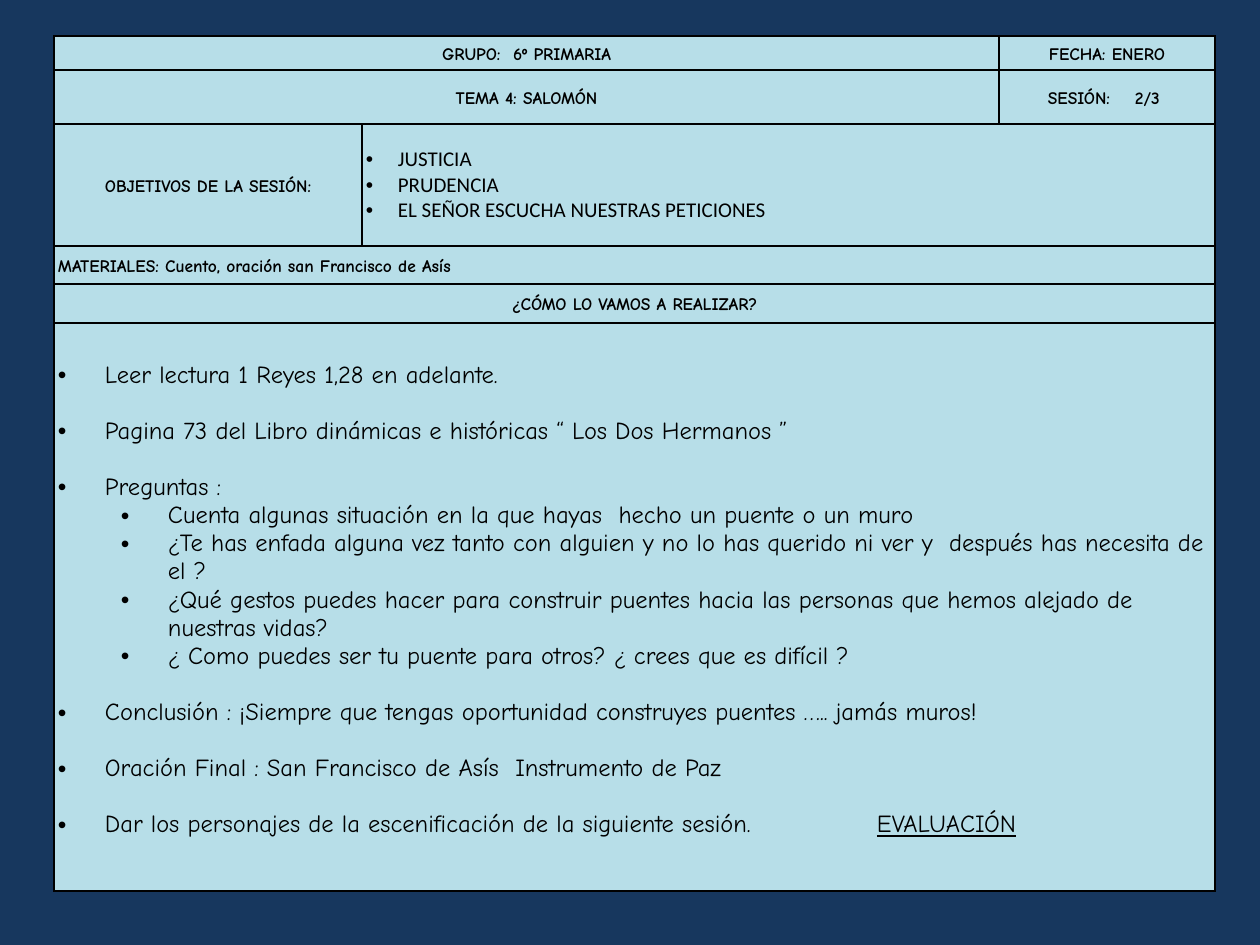
from dataclasses import dataclass

from lxml.etree import SubElement
from pptx import Presentation
from pptx.dml.color import RGBColor
from pptx.enum.text import MSO_ANCHOR as Anchor, PP_ALIGN as Align
from pptx.oxml.ns import qn
from pptx.util import Pt

PX = 914400 / 126
COLUMNS = [308, 637, 216]
ROWS = [34, 54, 122, 38, 39, 568]
GOALS = ["JUSTICIA", "PRUDENCIA", "EL SEÑOR ESCUCHA NUESTRAS PETICIONES"]
HEADINGS = [
    (0, 0, 1, "GRUPO:  6º PRIMARIA", Align.CENTER),
    (0, 2, 2, "FECHA: ENERO", Align.CENTER),
    (1, 0, 1, "TEMA 4: SALOMÓN", Align.CENTER),
    (1, 2, 2, "SESIÓN:    2/3 ", Align.CENTER),
    (2, 0, 0, "OBJETIVOS DE LA SESIÓN:", Align.CENTER),
    (3, 0, 2, "MATERIALES: Cuento, oración san Francisco de Asís", Align.LEFT),
    (4, 0, 2, "¿CÓMO LO VAMOS A REALIZAR?", Align.CENTER),
]
ACTIVITIES = [
    ("Leer lectura 1 Reyes 1,28 en adelante.", []),
    ("Pagina 73 del Libro dinámicas e históricas “ Los Dos Hermanos ”", []),
    ("Preguntas :", [
        "Cuenta algunas situación en la que hayas  hecho un puente o un muro",
        "¿Te has enfada alguna vez tanto con alguien y no lo has querido ni ver y  "
        "después has necesita de el ?",
        "¿Qué gestos puedes hacer para construir puentes hacia las personas que "
        "hemos alejado de nuestras vidas?",
        "¿ Como puedes ser tu puente para otros? ¿ crees que es difícil ?",
    ]),
    ("Conclusión : ¡Siempre que tengas oportunidad construyes puentes ….. jamás muros!", []),
    ("Oración Final : San Francisco de Asís  Instrumento de Paz", []),
    ("Dar los personajes de la escenificación de la siguiente sesión. \t\t", []),
]


def px(length):
    """Turn pixels into EMU."""
    return round(length * PX)


@dataclass(frozen=True)
class Theme:
    """Colours, fonts and type sizes of the lesson sheet."""
    background: RGBColor = RGBColor(0x17, 0x37, 0x5E)
    panel: RGBColor = RGBColor(0xB7, 0xDE, 0xE8)
    ink: RGBColor = RGBColor(0, 0, 0)
    hand_font: str = "Comic Neue"
    plain_font: str = "Calibri"
    heading: int = 10
    goal: int = 12
    activity: int = 14
    gap: int = 16


class LessonSheet:
    """Draws the parts of a lesson plan on one slide."""

    def __init__(self, slide, theme):
        self.slide = slide
        self.theme = theme
        fill = slide.background.fill
        fill.solid()
        fill.fore_color.rgb = theme.background

    def grid(self, left, top, columns, rows):
        """Add the bordered table and return it."""
        frame = self.slide.shapes.add_table(
            len(rows), len(columns), px(left), px(top), px(sum(columns)), px(sum(rows)))
        table = frame.table
        table.first_row = table.horz_banding = False
        for column, width in zip(table.columns, columns):
            column.width = px(width)
        for row, height in zip(table.rows, rows):
            row.height = px(height)
        for cell in table.iter_cells():
            self.style_cell(cell)
        return table

    def style_cell(self, cell):
        """Give a cell its border, fill and margins."""
        properties = cell._tc.get_or_add_tcPr()
        for side in ("lnL", "lnR", "lnT", "lnB"):
            line = SubElement(properties, qn(f"a:{side}"), w=str(Pt(1)))
            line_fill = SubElement(line, qn("a:solidFill"))
            SubElement(line_fill, qn("a:srgbClr"), val=str(self.theme.ink))
        cell.fill.solid()
        cell.fill.fore_color.rgb = self.theme.panel
        cell.margin_left = cell.margin_right = px(4)
        cell.margin_top = cell.margin_bottom = 0
        cell.vertical_anchor = Anchor.MIDDLE

    def cell(self, table, row, first, last):
        """Return a cell, merged across the given columns."""
        cell = table.cell(row, first)
        if last > first:
            cell.merge(table.cell(row, last))
        return cell

    def paragraph(self, cell, text):
        """Return the cell's empty first paragraph, or a new one, with text."""
        text_frame = cell.text_frame
        paragraph = text_frame.add_paragraph() if text_frame.text else text_frame.paragraphs[0]
        paragraph.text = text
        return paragraph

    def format_runs(self, paragraph, size, font, bold=False):
        """Format every run of a paragraph."""
        for run in paragraph.runs:
            run.font.size = Pt(size)
            run.font.name = font
            run.font.bold = bold
            run.font.color.rgb = self.theme.ink

    def heading(self, cell, text, alignment):
        """Write a bold label."""
        paragraph = self.paragraph(cell, text)
        paragraph.alignment = alignment
        paragraph.line_spacing = 1.15
        self.format_runs(paragraph, self.theme.heading, self.theme.hand_font, True)

    def bullet(self, cell, text, size, font, margin, hanging, level=0, before=0):
        """Write a bulleted paragraph and return it."""
        paragraph = self.paragraph(cell, text)
        paragraph.level = level
        paragraph.space_before = Pt(before)
        properties = paragraph._p.get_or_add_pPr()
        properties.set("marL", str(px(margin)))
        properties.set("indent", str(-px(hanging)))
        SubElement(properties, qn("a:buFont"), typeface="Arial")
        SubElement(properties, qn("a:buChar"), char="•")
        self.format_runs(paragraph, size, font)
        return paragraph

    def goals(self, cell, goals):
        """List the goals of the session."""
        for goal in goals:
            self.bullet(cell, goal, self.theme.goal, self.theme.plain_font, 32, 32)

    def activities(self, cell, activities, closing):
        """List the activities with their questions, then the closing word."""
        theme = self.theme
        cell.vertical_anchor = Anchor.TOP
        cell.margin_top = px(38)
        for index, (activity, questions) in enumerate(activities):
            paragraph = self.bullet(cell, activity, theme.activity, theme.hand_font, 47, 47,
                                    before=theme.gap if index else 0)
            for question in questions:
                self.bullet(cell, question, theme.activity, theme.hand_font, 110, 47, level=1)
        run = paragraph.add_run()
        run.text = closing
        self.format_runs(paragraph, theme.activity, theme.hand_font)
        run.font.underline = True


def main():
    """Build the lesson sheet."""
    presentation = Presentation()
    presentation.slide_width = px(1260)
    presentation.slide_height = px(945)
    slide = presentation.slides.add_slide(presentation.slide_layouts[6])
    sheet = LessonSheet(slide, Theme())
    table = sheet.grid(54, 36, COLUMNS, ROWS)
    for row, first, last, text, alignment in HEADINGS:
        sheet.heading(sheet.cell(table, row, first, last), text, alignment)
    sheet.goals(sheet.cell(table, 2, 1, 2), GOALS)
    sheet.activities(sheet.cell(table, 5, 0, 2), ACTIVITIES, "EVALUACIÓN")
    presentation.save("out.pptx")


if __name__ == "__main__":
    main()
